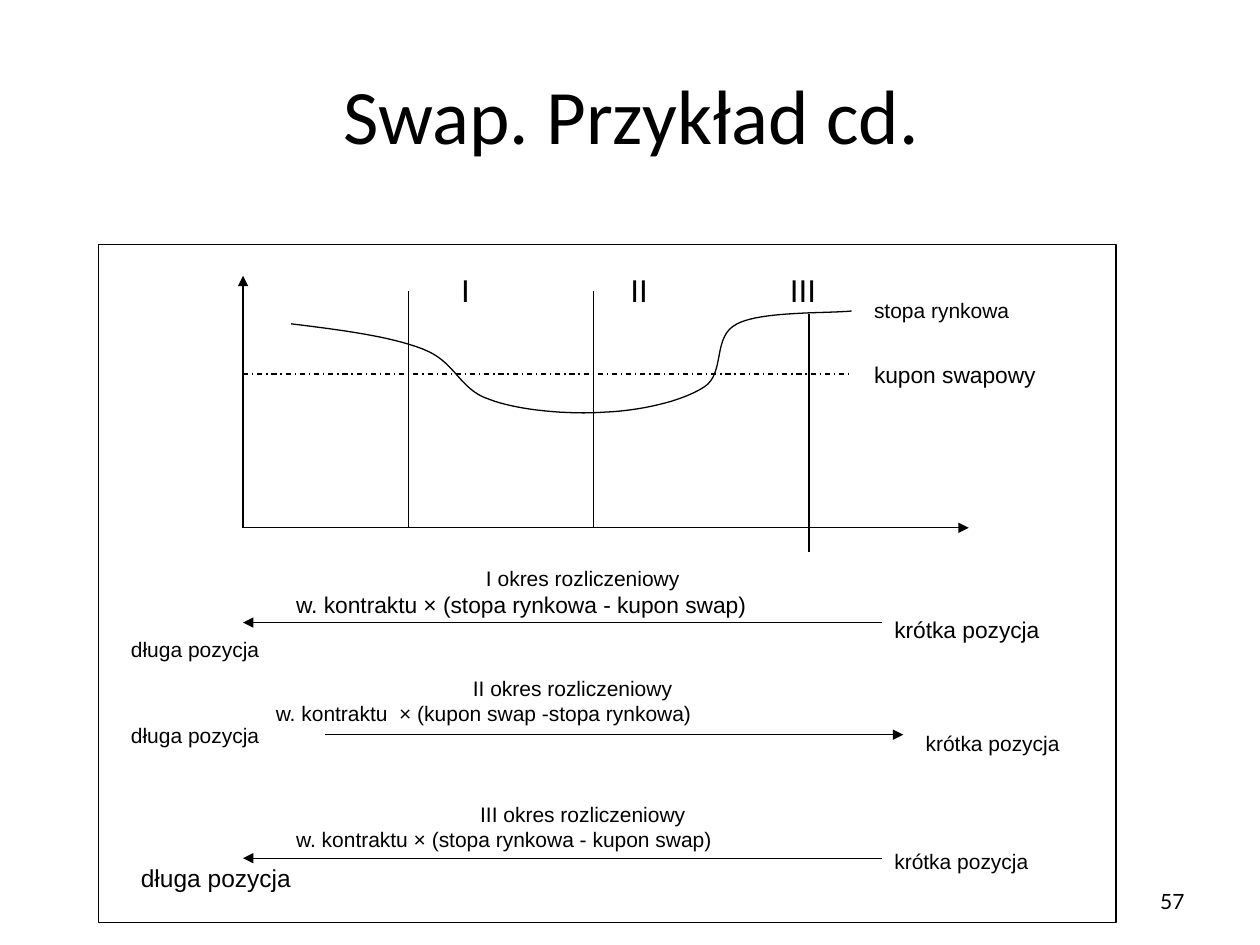
import pptx
import pptx.util
import pptx.dml.color
import pptx.enum.dml
import pptx.enum.shapes
import pptx.enum.text
import pptx.oxml
import pptx.oxml.ns

Cm = pptx.util.Cm
Pt = pptx.util.Pt
ALIGN = pptx.enum.text.PP_ALIGN
ANCHOR = pptx.enum.text.MSO_ANCHOR
BLACK = pptx.dml.color.RGBColor(0, 0, 0)
WHITE = pptx.dml.color.RGBColor(255, 255, 255)
LEFT, CENTER, RIGHT = ALIGN.LEFT, ALIGN.CENTER, ALIGN.RIGHT

prs = pptx.Presentation()
prs.slide_width, prs.slide_height = Cm(25.4), Cm(19.05)
s = prs.slides.add_slide(prs.slide_layouts[6])


def add_text(box, lines, filled=False, font="Arial", anchor=ANCHOR.TOP):
    """Add a text box; each line is (text, size, alignment)."""
    sp = s.shapes.add_textbox(*[Cm(v) for v in box])
    if filled:
        sp.fill.solid()
        sp.fill.fore_color.rgb = WHITE
    tf = sp.text_frame
    tf.word_wrap = True
    tf.vertical_anchor = anchor
    for i, (text, size, align) in enumerate(lines):
        p = tf.add_paragraph() if i else tf.paragraphs[0]
        p.alignment = align
        r = p.add_run()
        r.text = text
        for name, value in {"name": font, "size": Pt(size)}.items():
            setattr(r.font, name, value)
        r.font.color.rgb = BLACK


def add_line(x1, y1, x2, y2, arrow=False, dash=None):
    """Add a thin black line, with an arrowhead at its end if asked."""
    c = s.shapes.add_connector(pptx.enum.shapes.MSO_CONNECTOR.STRAIGHT,
                               Cm(x1), Cm(y1), Cm(x2), Cm(y2))
    for name, value in {"width": Pt(0.75), "dash_style": dash}.items():
        setattr(c.line, name, value)
    c.line.color.rgb = BLACK
    if arrow:
        ln = c.line._get_or_add_ln()
        ln.append(pptx.oxml.parse_xml(
            '<a:tailEnd %s type="triangle"/>' % pptx.oxml.ns.nsdecls("a")))
    c._element.spPr.append(pptx.oxml.parse_xml(
        "<a:effectLst %s/>" % pptx.oxml.ns.nsdecls("a")))


# Title and slide number
add_text((1.3, 0.71, 22.86, 3.18), [("Swap. Przykład cd.", 44, CENTER)],
         font="Calibri", anchor=ANCHOR.MIDDLE)
add_text((18.21, 17.65, 5.92, 1.02), [("57", 12, RIGHT)],
         font="Lato", anchor=ANCHOR.MIDDLE)

# Frame
frame = s.shapes.add_shape(pptx.enum.shapes.MSO_SHAPE.RECTANGLE,
                           Cm(1.98), Cm(4.93), Cm(20.52), Cm(13.67))
frame.fill.background()

# Market rate: chained cubic curves, each from the last end point
START = (5.87, 6.53)
CURVES = [
    ((6.86, 6.65), (7.87, 6.78), (8.53, 7.04)),
    ((9.19, 7.29), (9.25, 7.85), (9.86, 8.05)),
    ((10.46, 8.28), (11.48, 8.36), (12.19, 8.31)),
    ((12.9, 8.28), (13.74, 8.1), (14.2, 7.8)),
    ((14.63, 7.52), (14.35, 6.78), (14.86, 6.53)),
    ((15.34, 6.27), (16.74, 6.32), (17.17, 6.27)),
]
STEPS = 16
points = []
a = START
for b, c, d in CURVES:
    for i in range(1, STEPS + 1):
        t = i / STEPS
        u = 1 - t
        points.append(tuple(
            Cm(u**3 * a[k] + 3 * u * u * t * b[k] + 3 * u * t * t * c[k] + t**3 * d[k])
            for k in (0, 1)))
    a = d
fb = s.shapes.build_freeform(Cm(START[0]), Cm(START[1]))
fb.add_line_segments(points, close=False)
rate = fb.convert_to_shape()
rate.fill.background()

for sp in (frame, rate):
    sp.shadow.inherit = False
    sp.line.color.rgb = BLACK
    sp.line.width = Pt(0.75)

# Labels of the chart and of the two positions
for x, y, w, h, text, size in [
    (17.37, 5.87, 4.98, 0.97, "stopa rynkowa", 12),
    (17.37, 7.14, 4.98, 0.97, "kupon swapowy", 13),
    (2.39, 12.7, 3.33, 0.84, "długa pozycja", 12),
    (2.39, 14.45, 3.33, 0.84, "długa pozycja", 12),
    (2.59, 17.27, 3.73, 0.84, "długa pozycja", 14),
    (17.78, 12.29, 4.42, 0.89, "krótka pozycja", 13),
    (18.41, 14.6, 3.23, 0.76, "krótka pozycja", 12),
    (17.78, 16.99, 3.73, 0.97, "krótka pozycja", 12),
]:
    add_text((x, y, w, h), [(text, size, LEFT)], filled=True)

# Settlement periods
for x, y, w, period, formula, size in [
    (5.72, 11.28, 12.06, "I", "w. kontraktu × (stopa rynkowa - kupon swap)", 13),
    (5.31, 13.49, 12.47, "II", "w. kontraktu  × (kupon swap -stopa rynkowa)", 12),
    (5.72, 16.03, 12.06, "III", "w. kontraktu × (stopa rynkowa - kupon swap)", 12),
]:
    add_text((x, y, w, 1.27), [(period + " okres rozliczeniowy", 12, CENTER),
                               (formula, size, LEFT)], filled=True)

# Axes and swap coupon
add_line(4.9, 10.64, 4.9, 5.56, arrow=True)
add_line(4.9, 10.64, 19.53, 10.64, arrow=True)
add_line(4.9, 7.54, 17.17, 7.54, dash=pptx.enum.dml.MSO_LINE.DASH_DOT)

# Period boundaries
for x, top, bottom in [(8.23, 5.87, 10.64), (11.96, 5.87, 10.64), (16.31, 6.32, 11.13)]:
    add_line(x, top, x, bottom)

# Payment arrows
for x1, x2, y in [(17.78, 4.9, 12.55), (6.55, 18.21, 14.81), (17.78, 4.9, 17.3)]:
    add_line(x1, y, x2, y, arrow=True)

# Period numerals
for x, w, numeral in [(8.89, 0.99, "I"), (12.29, 1.19, "II"), (15.49, 1.4, "III")]:
    add_text((x, 5.33, w, 1.02), [(numeral, 18, CENTER)])

prs.save("out.pptx")
